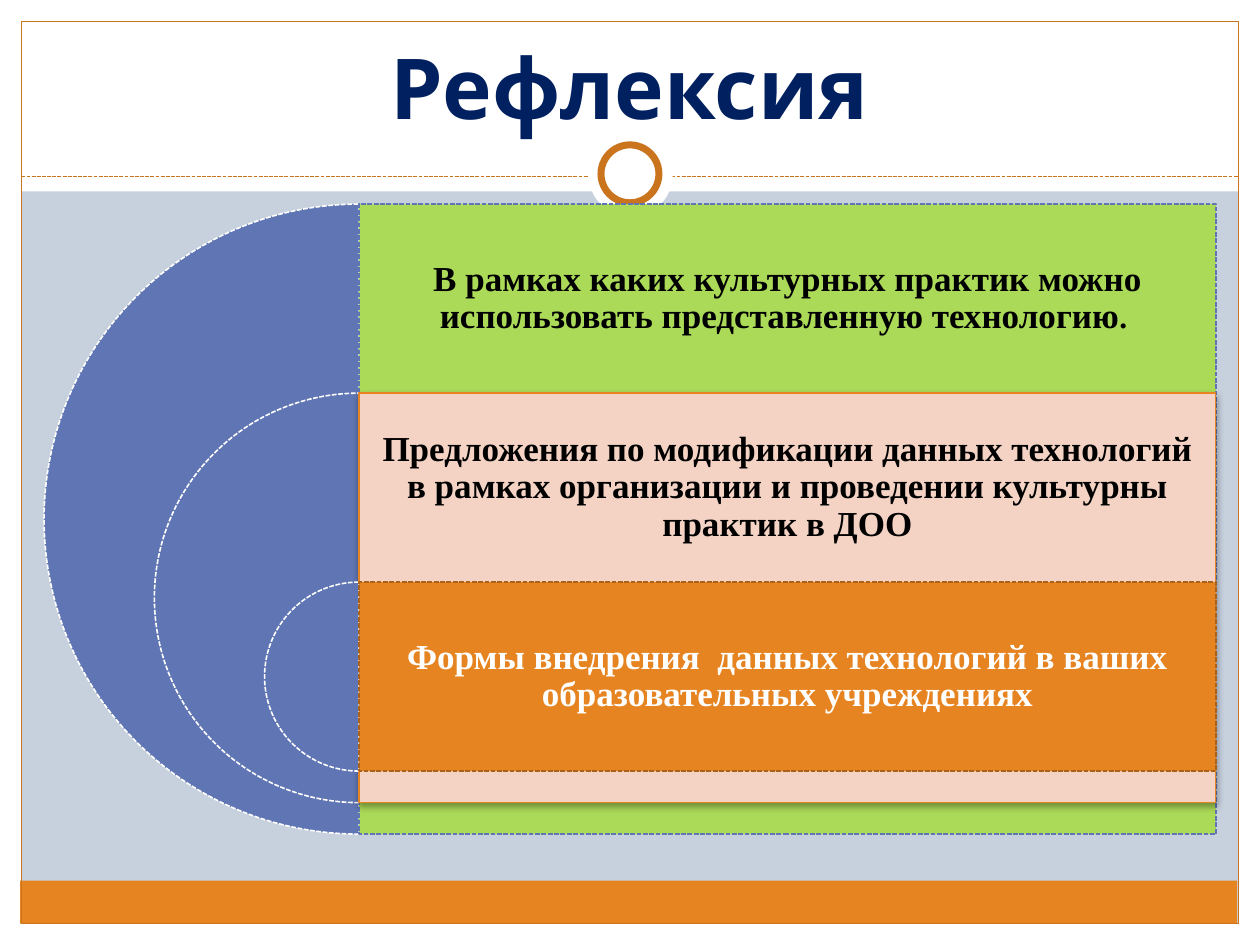
"""Build the reflection slide with three nested pies and question panels."""
from lxml import etree
from pptx import Presentation
from pptx.dml.color import RGBColor
from pptx.enum import dml, shapes, text
from pptx.oxml import ns
from pptx.util import Inches, Pt

WHITE = RGBColor(0xFF, 0xFF, 0xFF)
BLACK = RGBColor(0, 0, 0)
NAVY = RGBColor(0x00, 0x20, 0x60)
MIST = RGBColor(0xC7, 0xD1, 0xDE)
BLUE = RGBColor(0x60, 0x76, 0xB4)
GREEN = RGBColor(0xAB, 0xD9, 0x58)
PINK = RGBColor(0xF4, 0xD3, 0xC5)
ORANGE = RGBColor(0xE6, 0x84, 0x22)
BROWN = RGBColor(0xCB, 0x74, 0x1E)
DARK_BROWN = RGBColor(0xAA, 0x62, 0x19)

TITLE = "Рефлексия"
MARGINS = [(0, 7.33, 10, 0.17), (0, 0, 10, 1.52), (0, 0, 0.17, 7.5), (9.83, 0, 0.17, 7.5)]
PANELS = [
    {"runs": [("В рамках каких культурных практик можно использовать представленную технологию", 20),
              (". ", 18)],
     "fill": GREEN, "line": (BLUE, 0.9, True), "ink": BLACK, "shadow": False},
    {"runs": [("Предложения по модификации данных технологий в рамках организации "
               "и проведении культурны практик в ДОО", 20)],
     "fill": PINK, "line": (ORANGE, 0.75, False), "ink": BLACK, "shadow": True},
    {"runs": [("Формы внедрения  данных технологий в ваших образовательных учреждениях", 20)],
     "fill": ORANGE, "line": (DARK_BROWN, 0.9, True), "ink": WHITE, "shadow": False},
]
PANEL_LEFT, PANEL_TOP, PANEL_WIDTH = 2.85, 1.62, 6.8
STEP, LARGEST, SHRINK = 1.5, 5, 1.75


def style_line(line, color, width, dashed=False):
    line.color.rgb = color
    line.width = Pt(width)
    if dashed:
        line.dash_style = dml.MSO_LINE.SQUARE_DOT


def add_shape(slide, kind, box, fill=None, line=None):
    shape = slide.shapes.add_shape(kind, *map(Inches, box))
    shape.shadow.inherit = False
    if fill is None:
        shape.fill.background()
    else:
        shape.fill.solid()
        shape.fill.fore_color.rgb = fill
    if line is None:
        shape.line.fill.background()
    else:
        style_line(shape.line, *line)
    return shape


def add_shadow(shape):
    effects = shape._element.spPr.find(ns.qn("a:effectLst"))
    shadow = etree.SubElement(effects, ns.qn("a:outerShdw"), blurRad=str(Pt(4)), dist=str(Pt(2)),
                              dir="5400000", rotWithShape="0")
    color = etree.SubElement(shadow, ns.qn("a:srgbClr"), val=str(BLACK))
    etree.SubElement(color, ns.qn("a:alpha"), val="35000")


def add_text(slide, box, runs, font, color, anchor, inset, spacing):
    frame = slide.shapes.add_textbox(*map(Inches, box)).text_frame
    frame.word_wrap = True
    frame.vertical_anchor = anchor
    frame.margin_left = frame.margin_right = Inches(inset)
    frame.margin_top = frame.margin_bottom = Inches(inset)
    paragraph = frame.paragraphs[0]
    paragraph.alignment = text.PP_ALIGN.CENTER
    paragraph.line_spacing = spacing
    for words, size in runs:
        run = paragraph.add_run()
        run.text = words
        run.font.name = font
        run.font.size = Pt(size)
        run.font.bold = True
        run.font.color.rgb = color


def add_frame(slide):
    for box in MARGINS:
        add_shape(slide, shapes.MSO_SHAPE.RECTANGLE, box, WHITE)
    add_shape(slide, shapes.MSO_SHAPE.RECTANGLE, (0.16, 6.99, 9.66, 0.34), ORANGE)
    add_shape(slide, shapes.MSO_SHAPE.RECTANGLE, (0.17, 0.17, 9.66, 7.16), line=(BROWN, 0.75))
    divider = slide.shapes.add_connector(
        shapes.MSO_CONNECTOR.STRAIGHT, *map(Inches, (0.17, 1.4, 9.83, 1.4)))
    style_line(divider.line, BROWN, 0.75, True)
    etree.SubElement(divider._element.spPr, ns.qn("a:effectLst"))
    add_shape(slide, shapes.MSO_SHAPE.OVAL, (4.67, 1.05, 0.67, 0.67), WHITE)
    add_shape(slide, shapes.MSO_SHAPE.OVAL, (4.77, 1.15, 0.46, 0.46), WHITE, (BROWN, 4))


def add_panel(slide, index, panel):
    top = PANEL_TOP + index * STEP
    size = LARGEST - index * SHRINK
    pie = add_shape(slide, shapes.MSO_SHAPE.PIE, (PANEL_LEFT - size / 2, top, size, size),
                    BLUE, (WHITE, 0.9, True))
    pie.adjustments[0], pie.adjustments[1] = 54, 162
    rectangle = add_shape(slide, shapes.MSO_SHAPE.RECTANGLE, (PANEL_LEFT, top, PANEL_WIDTH, size),
                          panel["fill"], panel["line"])
    if panel["shadow"]:
        add_shadow(rectangle)
    add_text(slide, (PANEL_LEFT, top, PANEL_WIDTH, STEP), panel["runs"], "Times New Roman",
             panel["ink"], text.MSO_ANCHOR.MIDDLE, 0.08, 0.9)


def main():
    presentation = Presentation()
    presentation.slide_width, presentation.slide_height = Inches(10), Inches(7.5)
    slide = presentation.slides.add_slide(presentation.slide_layouts[6])
    slide.background.fill.solid()
    slide.background.fill.fore_color.rgb = MIST
    add_frame(slide)
    add_text(slide, (0.33, 0.25, 9.33, 0.83), [(TITLE, 48)], "Karla", NAVY,
             text.MSO_ANCHOR.BOTTOM, 0, 1.0)
    for index, panel in enumerate(PANELS):
        add_panel(slide, index, panel)
    presentation.save("out.pptx")


if __name__ == "__main__":
    main()
